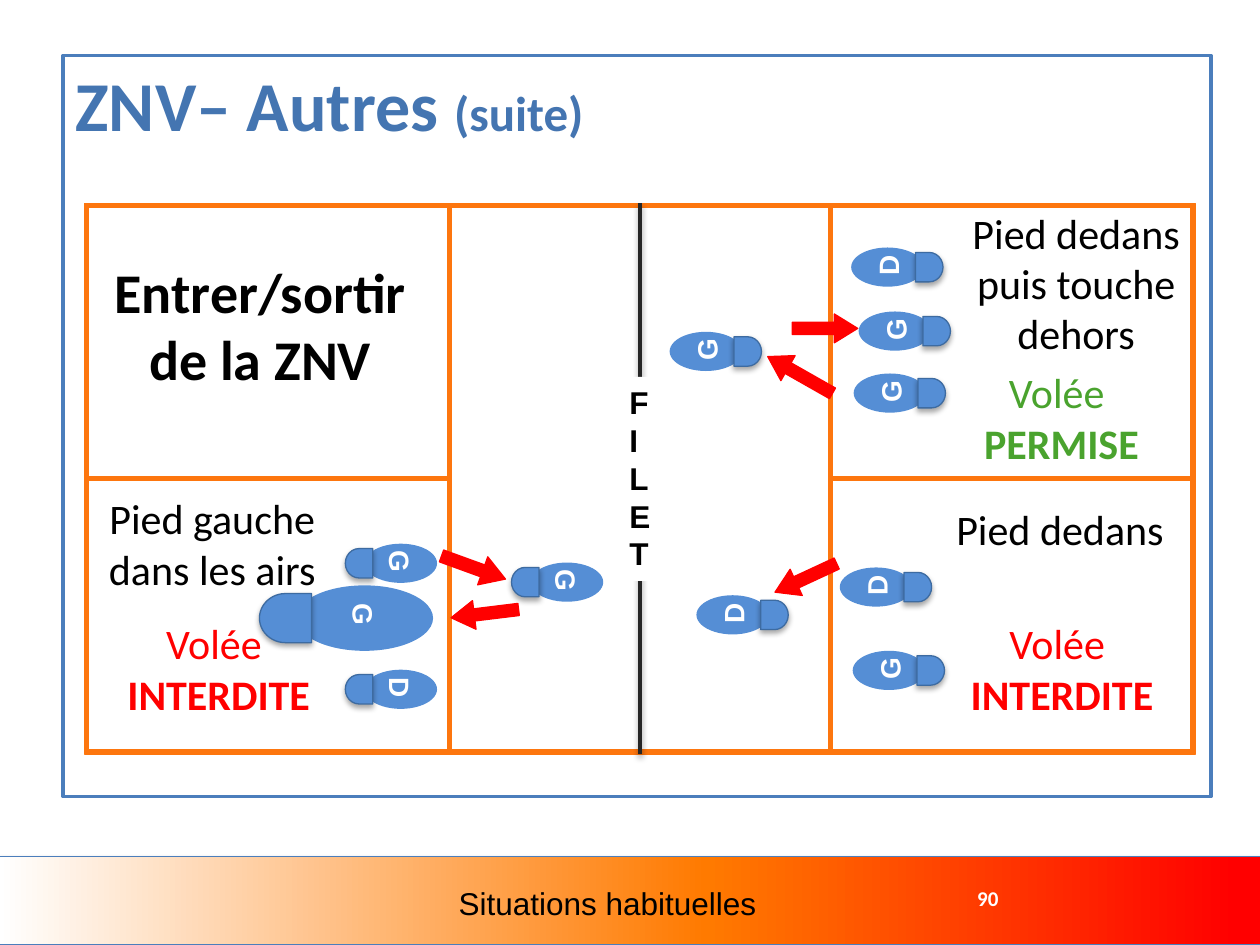
from copy import deepcopy

from lxml.etree import SubElement
from pptx import Presentation
from pptx.dml.color import RGBColor
from pptx.enum.shapes import MSO_CONNECTOR, MSO_SHAPE
from pptx.enum.text import MSO_ANCHOR, MSO_AUTO_SIZE, PP_ALIGN
from pptx.oxml.ns import qn
from pptx.util import Cm, Pt

WHITE = RGBColor(0xFF, 0xFF, 0xFF)
BLACK = RGBColor(0, 0, 0)
RED = RGBColor(0xFF, 0, 0)
GREEN = RGBColor(0x4A, 0xA3, 0x2E)
ORANGE = RGBColor(0xFD, 0x76, 0x0E)
BAND_ORANGE = RGBColor(0xFF, 0x7A, 0)
FRAME_BLUE = RGBColor(0x4B, 0x7E, 0xBC)
TITLE_BLUE = RGBColor(0x44, 0x75, 0xB1)
FOOT_BLUE = RGBColor(0x55, 0x8E, 0xD5)
TOE_LINE = RGBColor(0x3D, 0x6B, 0xA1)
NET_GREY = RGBColor(0x26, 0x26, 0x26)

FOOT_W, FOOT_H = 1.85, 0.79


def set_effects(sp, shadow=False):
    pr = sp._element.spPr
    for old in pr.findall(qn("a:effectLst")):
        pr.remove(old)
    effects = SubElement(pr, qn("a:effectLst"))
    if shadow:
        outer = SubElement(effects, qn("a:outerShdw"), blurRad="40000", dist="23000",
                           dir="5400000", rotWithShape="0")
        color = SubElement(outer, qn("a:srgbClr"), val="000000")
        SubElement(color, qn("a:alpha"), val="35000")


def add_block(s, kind, box, fill, line=None, rotation=0, shadow=False):
    sp = s.shapes.add_shape(kind, *map(Cm, box))
    sp.fill.solid()
    sp.fill.fore_color.rgb = fill
    if line is None:
        sp.line.fill.background()
    else:
        sp.line.color.rgb = line
        sp.line.width = Pt(0.75)
    sp.rotation = rotation
    set_effects(sp, shadow)
    return sp


def add_text(s, box, text, size, color=BLACK, font="Calibri", bold=False,
             align=PP_ALIGN.CENTER, wrap=True, fill=None):
    sp = s.shapes.add_textbox(*map(Cm, box))
    if fill is not None:
        sp.fill.solid()
        sp.fill.fore_color.rgb = fill
    tf = sp.text_frame
    tf.word_wrap = wrap
    p = tf.paragraphs[0]
    p.text = text
    p.alignment = align
    p.font.name, p.font.size = font, Pt(size)
    p.font.bold, p.font.color.rgb = bold, color
    return sp


def add_line(s, x1, y1, x2, y2, color, width, shadow=False):
    ln = s.shapes.add_connector(MSO_CONNECTOR.STRAIGHT, *map(Cm, (x1, y1, x2, y2)))
    ln.line.color.rgb = color
    ln.line.width = Pt(width)
    set_effects(ln, shadow)


def add_foot(s, x, y, label, to_left=False, w=FOOT_W, h=FOOT_H):
    sole_w, toe_w, toe_h = 0.79 * w, 0.3 * w, 0.75 * h
    sole_x, toe_x = (x + w - sole_w, x) if to_left else (x, x + w - toe_w)
    turn = 180 if to_left else 0
    add_block(s, MSO_SHAPE.FLOWCHART_CONNECTOR, (sole_x, y, sole_w, h), FOOT_BLUE, rotation=turn)
    add_block(s, MSO_SHAPE.FLOWCHART_DELAY, (toe_x, y + (h - toe_h) / 2, toe_w, toe_h),
              FOOT_BLUE, TOE_LINE, turn, shadow=True)
    side = 0.94
    cx, cy = x + w * (0.6 if to_left else 0.4), y + h * 0.45
    sp = add_text(s, (cx - side / 2, cy - side / 2, side, side), label, 16, WHITE,
                  "Arial", True, wrap=False)
    sp.text_frame.vertical_anchor = MSO_ANCHOR.MIDDLE
    sp.rotation = 90 if to_left else 270


def add_arrow(s, box, rotation):
    sp = add_block(s, MSO_SHAPE.LEFT_ARROW, box, RED, RED, rotation)
    sp.adjustments[0], sp.adjustments[1] = 0.422, 0.812


def add_verdict(s, box, word, color):
    sp = add_text(s, box, "Volée ", 24, color, wrap=False)
    p = sp.text_frame.paragraphs[0]
    p.add_line_break()
    r = p.add_run()
    r.text = word
    r.font.bold = True


def add_footer(s, x, y, w, h):
    band = add_block(s, MSO_SHAPE.RECTANGLE, (x, y, w, h), WHITE, FRAME_BLUE, shadow=True)
    band.fill.gradient()
    band.fill.gradient_angle = 0
    first = band.fill._fill._gradFill.gsLst[0]
    first.addnext(deepcopy(first))
    stops = ((0, WHITE), (0.56, BAND_ORANGE), (0.98, RED))
    for stop, (position, color) in zip(band.fill.gradient_stops, stops):
        stop.position = position
        stop.color.rgb = color
    add_text(s, (x + 19.48, y + 0.46, 1.22, 0.76), "90", 12, WHITE, bold=True,
             align=PP_ALIGN.LEFT, wrap=False)
    add_text(s, (x + 7.64, y + 0.43, 9.27, 1.02), "Situations habituelles", 18, font="Arial")


def add_title(s, x, y, w, h):
    sp = s.shapes.title
    sp.left, sp.top, sp.width, sp.height = map(Cm, (x, y, w, h))
    sp.line.color.rgb = FRAME_BLUE
    sp.line.width = Pt(2)
    tf = sp.text_frame
    tf.auto_size = MSO_AUTO_SIZE.NONE
    tf.vertical_anchor = MSO_ANCHOR.TOP
    p = tf.paragraphs[0]
    p.alignment = PP_ALIGN.LEFT
    p.font.name, p.font.bold = "Calibri", True
    p.font.color.rgb = TITLE_BLUE
    for text, size in (("ZNV– Autres ", 40), ("(suite)", 28)):
        r = p.add_run()
        r.text = text
        r.font.size = Pt(size)


def add_court(s, x, y, w, h, zone_w):
    frame = add_block(s, MSO_SHAPE.FRAME, (x, y, w, h), ORANGE, ORANGE)
    frame.adjustments[0] = 0.008
    net_x, mid_y = x + w / 2, y + h / 2
    add_line(s, net_x, y, net_x, y + h, NET_GREY, 2, shadow=True)
    for line_x, edge_x in ((x + zone_w, x), (x + w - zone_w, x + w)):
        add_line(s, line_x, y, line_x, y + h, ORANGE, 3)
        add_line(s, line_x, mid_y, edge_x, mid_y, ORANGE, 3)
    add_text(s, (net_x - 0.46, y + 3.5, 0.92, 4.11), "FILET", 18, font="Arial", bold=True,
             align=PP_ALIGN.LEFT, fill=WHITE)
    add_text(s, (x + 0.3, y + 0.96, 6.5, 3), "Entrer/sortir de la ZNV", 32, bold=True, fill=WHITE)


def add_airborne_zone(s, x, y):
    add_text(s, (x, y + 0.16, 5.16, 2.31), "Pied gauche dans les airs", 24)
    add_verdict(s, (x + 0.59, y + 2.68, 4.24, 2.31), "INTERDITE", RED)
    for dx, dy, label in ((5.26, 1.31, "G"), (5.26, 3.85, "D"), (8.61, 1.69, "G")):
        add_foot(s, x + dx, y + dy, label, to_left=True)
    add_foot(s, x + 3.53, y + 2.15, "G", to_left=True, w=3.5, h=1.32)
    add_arrow(s, (x + 7.16, y + 1.49, 1.37, 0.6), 199.9)
    add_arrow(s, (x + 7.39, y + 2.43, 1.37, 0.58), 353)


def add_step_out_zone(s, x, y):
    add_verdict(s, (x + 2.83, y + 3.17, 3.66, 2.31), "PERMISE", GREEN)
    add_text(s, (x + 2.07, y - 0.05, 5.77, 3.33), "Pied dedans puis touche dehors", 24)
    for dx, dy, label in ((0.42, 0.89, "D"), (0.57, 2.18, "G"), (0.47, 3.43, "G"),
                          (-3.24, 2.59, "G")):
        add_foot(s, x + dx, y + dy, label)
    add_arrow(s, (x - 1.36, y + 3.17, 1.5, 0.58), 29.6)
    add_arrow(s, (x - 0.77, y + 2.23, 1.32, 0.58), 180)


def add_step_in_zone(s, x, y):
    add_verdict(s, (x + 2.55, y + 2.68, 4.24, 2.31), "INTERDITE", RED)
    add_text(s, (x + 2.05, y + 0.37, 5.16, 1.27), "Pied dedans", 24)
    for dx, dy, label in ((0.19, 1.79, "D"), (0.45, 3.47, "G"), (-2.7, 2.35, "D")):
        add_foot(s, x + dx, y + dy, label)
    add_arrow(s, (x - 1.18, y + 1.71, 1.37, 0.58), 335.1)


def main():
    prs = Presentation()
    prs.slide_width, prs.slide_height = Cm(25.4), Cm(19.05)
    s = prs.slides.add_slide(prs.slide_layouts[5])
    add_footer(s, -0.03, 17.27, 25.48, 1.78)
    add_title(s, 1.27, 1.12, 23.14, 14.94)
    x, y, w, h, zone_w = 1.7, 4.1, 22.4, 11.1, 7.36
    add_court(s, x, y, w, h, zone_w)
    right_x, mid_y = x + w - zone_w, y + h / 2
    add_airborne_zone(s, x, mid_y)
    add_step_out_zone(s, right_x, y)
    add_step_in_zone(s, right_x, mid_y)
    prs.save("out.pptx")


if __name__ == "__main__":
    main()
